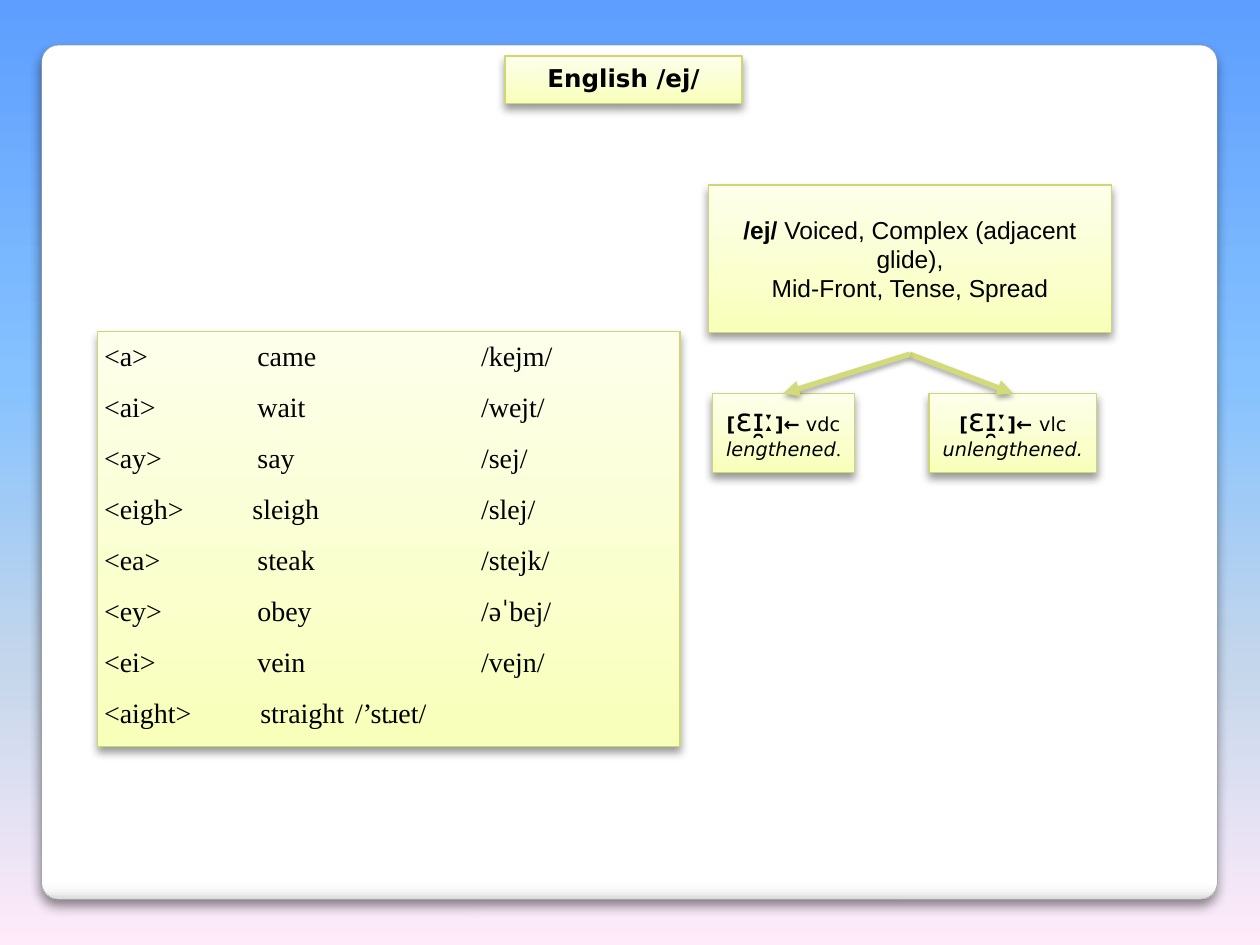
from lxml.etree import SubElement
from pptx import Presentation
from pptx.dml.color import RGBColor
from pptx.enum.shapes import MSO_CONNECTOR, MSO_SHAPE
from pptx.enum.text import MSO_ANCHOR, MSO_AUTO_SIZE, PP_ALIGN
from pptx.oxml.ns import qn
from pptx.util import Cm, Pt

BLACK = RGBColor(0x00, 0x00, 0x00)
BOX_LINE = RGBColor(0xCF, 0xD7, 0x75)
ARROW = RGBColor(0xD2, 0xDA, 0x7A)
PANEL_LINE = RGBColor(0xA2, 0xA1, 0xA1)
SKY = [(0, RGBColor(0x5E, 0x9E, 0xFF)), (40, RGBColor(0x85, 0xC2, 0xFF)),
       (70, RGBColor(0xC4, 0xD6, 0xEB)), (100, RGBColor(0xFF, 0xEB, 0xFA))]
PAPER = [(0, RGBColor(0xFF, 0xFF, 0xFF)), (98, RGBColor(0xFF, 0xFF, 0xFF)),
         (99, RGBColor(0xF7, 0xF7, 0xF7)), (100, RGBColor(0xD9, 0xD9, 0xD9))]
LIME = [(0, RGBColor(0xF8, 0xFF, 0xB8)), (35, RGBColor(0xFA, 0xFF, 0xCC)),
        (100, RGBColor(0xFD, 0xFF, 0xEB))]
SANS, SERIF = "DejaVu Sans", "Times New Roman"


def set_gradient(fill, element, stops, angle):
    """Fill with any number of (percent, colour) stops; angle is counter-clockwise."""
    fill.gradient()
    fill.gradient_angle = angle
    stop_list = next(element.iter(qn("a:gsLst")))
    stop_list.clear()
    for percent, color in stops:
        stop = SubElement(stop_list, qn("a:gs"), pos=str(percent * 1000))
        SubElement(stop, qn("a:srgbClr"), val=str(color))


def add_shadow(element, opacity, blur, distance):
    effects = SubElement(element.spPr, qn("a:effectLst"))
    shadow = SubElement(effects, qn("a:outerShdw"), blurRad=str(Pt(blur)),
                        dist=str(Pt(distance)), dir="5400000", rotWithShape="0")
    color = SubElement(shadow, qn("a:srgbClr"), val=str(BLACK))
    SubElement(color, qn("a:alpha"), val=str(opacity * 1000))


presentation = Presentation()
presentation.slide_width, presentation.slide_height = Cm(25.4), Cm(19.05)
slide = presentation.slides.add_slide(presentation.slide_layouts[5])
set_gradient(slide.background.fill, slide.element, SKY, 270)
title = slide.shapes.title

# White panel behind everything
panel = slide.shapes.add_shape(MSO_SHAPE.ROUNDED_RECTANGLE,
                               Cm(0.84), Cm(0.91), Cm(23.7), Cm(17.22))
panel.adjustments[0] = 0.02
set_gradient(panel.fill, panel.element, PAPER, 270)
panel.line.color.rgb = PANEL_LINE
panel.line.width = Pt(0.25)
add_shadow(panel.element, 45, 6, 4)
title.element.addprevious(panel.element)

# Spelling, example and transcription, with the tab stops of each row in cm
COLUMNS = (3.09, 7.6)
words = [
    ("<a>", "came", "/kejm/", COLUMNS),
    ("<ai>", "wait", "/wejt/", COLUMNS),
    ("<ay>", "say", "/sej/", COLUMNS),
    ("<eigh>", "sleigh", "/slej/", (2.99, 7.6)),
    ("<ea>", "steak", "/stejk/", COLUMNS),
    ("<ey>", "obey", "/əˈbej/", COLUMNS),
    ("<ei>", "vein", "/vejn/", COLUMNS),
    ("<aight>", "straight", "/’stɹet/", (3.15, 5.06)),
]
word_rows = []
for spelling, example, sound, stops in words:
    before, stress, after = f"{spelling}\t{example}\t{sound}".partition("ˈ")
    runs = [(before, SERIF, 16, False, False), (stress, "Calibri", 16, False, False),
            (after, SERIF, 16, False, False)]
    word_rows.append([run for run in runs if run[0]])

# Runs are (text, font, size, bold, italic)
title_text = [[("English /ej/", SANS, 14, True, False)]]
description = [
    [("/ej/ ", "Arial", 14, True, False),
     ("Voiced, Complex (adjacent glide),", "Arial", 14, False, False)],
    [("Mid-Front, Tense, Spread", "Arial", 14, False, False)],
]
allophone = [("[", SANS, 11, True, False), ("ɛɪ̯ː", SANS, 18, False, False)]
lengthened = [allophone + [("]←", SANS, 11, True, False), (" vdc ", SANS, 11, False, False),
                           ("lengthened", SANS, 11, False, True),
                           (".", SERIF, 11, False, False)]]
unlengthened = [allophone + [("]← ", SANS, 11, True, False), ("vlc ", SANS, 11, False, False),
                             ("unlengthened.", SANS, 11, False, True)]]

TOP, MIDDLE = MSO_ANCHOR.TOP, MSO_ANCHOR.MIDDLE
CENTER, JUSTIFY = PP_ALIGN.CENTER, PP_ALIGN.JUSTIFY
word_list, description_box, lengthened_box, unlengthened_box = [
    slide.shapes.add_shape(MSO_SHAPE.RECTANGLE, 0, 0, Cm(1), Cm(1)) for _ in range(4)]
boxes = [
    (title, (10.18, 1.13, 4.78, 0.96), TOP, CENTER, title_text),
    (word_list, (1.97, 6.69, 11.74, 8.36), TOP, JUSTIFY, word_rows),
    (description_box, (14.28, 3.73, 8.13, 2.97), MIDDLE, CENTER, description),
    (lengthened_box, (14.36, 7.93, 2.87, 1.6), TOP, CENTER, lengthened),
    (unlengthened_box, (18.73, 7.93, 3.38, 1.6), TOP, CENTER, unlengthened),
]
for shape, place, anchor, alignment, paragraphs in boxes:
    shape.left, shape.top, shape.width, shape.height = map(Cm, place)
    set_gradient(shape.fill, shape.element, LIME, 90)
    shape.line.color.rgb = BOX_LINE
    shape.line.width = Pt(0.75)
    add_shadow(shape.element, 40, 5, 3)
    frame = shape.text_frame
    frame.word_wrap = True
    frame.auto_size = MSO_AUTO_SIZE.NONE
    frame.vertical_anchor = anchor
    frame.margin_left = frame.margin_right = Cm(0.13)
    frame.margin_top = frame.margin_bottom = Cm(0.13)
    for index, runs in enumerate(paragraphs):
        paragraph = frame.paragraphs[0] if index == 0 else frame.add_paragraph()
        paragraph.alignment = alignment
        paragraph.space_before = Pt(10 if index and shape is word_list else 0)
        for text, font, size, bold, italic in runs:
            run = paragraph.add_run()
            run.text = text
            run.font.name = font
            run.font.size = Pt(size)
            run.font.bold = bold
            run.font.italic = italic
            run.font.color.rgb = BLACK

# The columns of the word list stand on tab stops
for paragraph, (*_, stops) in zip(word_list.text_frame.paragraphs, words):
    tabs = SubElement(paragraph._p.get_or_add_pPr(), qn("a:tabLst"))
    for stop in stops:
        SubElement(tabs, qn("a:tab"), pos=str(Cm(stop)), algn="l")

# Arrows from below the description to each allophone
for box in (unlengthened_box, lengthened_box):
    arrow = slide.shapes.add_connector(MSO_CONNECTOR.STRAIGHT,
                                       Cm(18.34), Cm(7.14), Cm(18.34), Cm(7.93))
    arrow.end_connect(box, 0)
    arrow.line.color.rgb = ARROW
    arrow.line.width = Pt(3)
    SubElement(arrow.element.spPr.find(qn("a:ln")), qn("a:tailEnd"), type="triangle")
    add_shadow(arrow.element, 35, 3, 1.8)

presentation.save("out.pptx")
